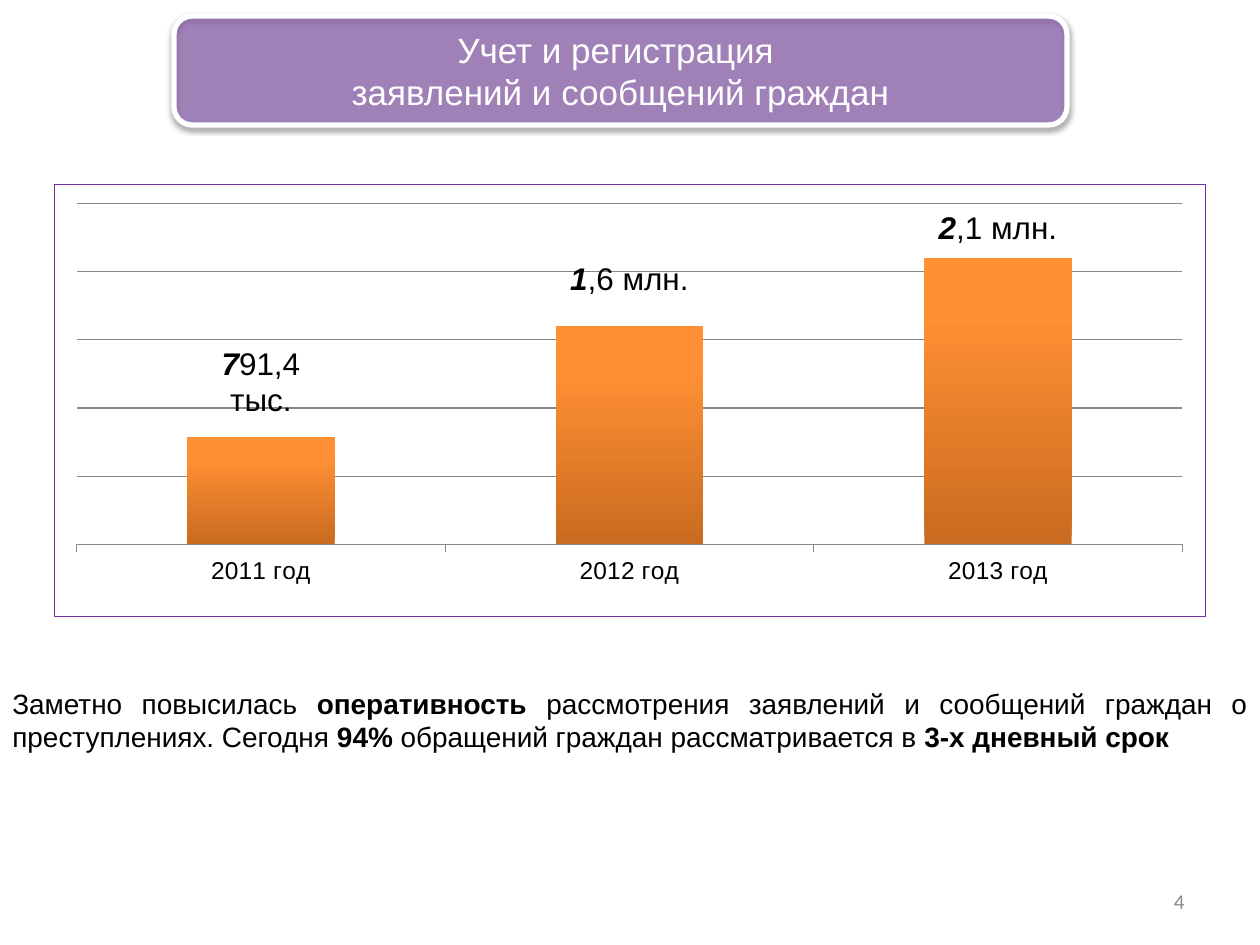
from lxml.etree import SubElement
from pptx import Presentation
from pptx.chart.data import CategoryChartData
from pptx.dml.color import RGBColor
from pptx.enum.chart import XL_CHART_TYPE as ChartType, XL_LABEL_POSITION as LabelPosition
from pptx.enum.chart import XL_TICK_MARK as TickMark
from pptx.enum.shapes import MSO_SHAPE as Shape
from pptx.enum.text import MSO_ANCHOR as Anchor, MSO_AUTO_SIZE as AutoSize, PP_ALIGN as Align
from pptx.oxml import parse_xml
from pptx.oxml.ns import nsdecls, qn
from pptx.util import Emu, Pt

FONT = "Arial"
PURPLE = "7030A0"
GREY = "878787"
BANNER = (174, 16, 893, 109)
CHART_WIDTH, CHART_HEIGHT = 1152, 433

# Category, value, label text, upward shift of the label in px
YEARS = [
    ("2011 год", 791000, "791,4 тыс.", 14),
    ("2012 год", 1600000, "1,6 млн.", 24),
    ("2013 год", 2100000, "2,1 млн.", 7),
]

# Text, bold
SUMMARY = [
    ("Заметно повысилась ", False),
    ("оперативность ", True),
    ("рассмотрения заявлений и сообщений граждан о преступлениях. Сегодня ", False),
    ("94%", True),
    (" обращений граждан рассматривается в ", False),
    ("3-х дневный срок", True),
]


def px(length):
    return Emu(round(length * 914400 / 126))


def box(*lengths):
    return [px(length) for length in lengths]


def color(value):
    return RGBColor.from_string(value)


def set_font(font, size, value, name=FONT):
    font.name, font.size = name, Pt(size)
    font.color.rgb = color(value)


def shadow():
    return parse_xml(
        f'<a:effectLst {nsdecls("a")}><a:outerShdw blurRad="{Pt(3.1)}" dist="{Pt(1.6)}" '
        'dir="5400000" rotWithShape="0"><a:srgbClr val="000000"><a:alpha val="38000"/>'
        '</a:srgbClr></a:outerShdw></a:effectLst>')


def add_banner(slide):
    banner = slide.shapes.add_shape(Shape.ROUNDED_RECTANGLE, *box(*BANNER))
    banner.fill.solid()
    banner.fill.fore_color.rgb = color(PURPLE)
    banner.line.color.rgb = color("FFFFFF")
    banner.line.width = Pt(3)
    properties = banner._element.spPr
    fill_color = properties.find(qn("a:solidFill"))[0]
    SubElement(fill_color, qn("a:alpha"), val="49000")
    properties.append(shadow())


def set_title(slide, lines):
    title = slide.shapes.title
    title.left, title.top, title.width, title.height = box(*BANNER)
    frame = title.text_frame
    frame.text = "\n".join(lines)
    frame.auto_size = AutoSize.NONE
    frame.vertical_anchor = Anchor.MIDDLE
    for paragraph in frame.paragraphs:
        paragraph.alignment = Align.CENTER
        set_font(paragraph.font, 20, "FEFEFE")
        paragraph.runs[0]._r.get_or_add_rPr().append(shadow())
    # Bring the title in front of the banner
    slide.shapes._spTree.append(title._element)


def add_text(slide, place, runs, size, value, align, name=FONT, anchor=Anchor.TOP):
    frame = slide.shapes.add_textbox(*box(*place)).text_frame
    frame.word_wrap = True
    frame.vertical_anchor = anchor
    paragraph = frame.paragraphs[0]
    paragraph.alignment = align
    set_font(paragraph.font, size, value, name)
    for text, bold in runs:
        run = paragraph.add_run()
        run.text = text
        run.font.bold = bold


def manual_layout(inner="", **values):
    parts = "".join(f'<c:{key} val="{value}"/>' for key, value in values.items())
    return parse_xml(f'<c:layout {nsdecls("c")}><c:manualLayout>{inner}{parts}'
                     '</c:manualLayout></c:layout>')


def style_axes(chart):
    values = chart.value_axis
    values.minimum_scale, values.maximum_scale, values.major_unit = 0, 2500000, 500000
    values.has_major_gridlines = True
    values.visible = False
    categories = chart.category_axis
    categories.major_tick_mark = TickMark.OUTSIDE
    for line in (values.major_gridlines.format.line, categories.format.line):
        line.color.rgb = color(GREY)
        line.width = Pt(0.75)


def style_bars(series):
    series.invert_if_negative = False
    fill = series.format.fill
    fill.gradient()
    fill.gradient_angle = 90
    for stop, position, value in zip(fill.gradient_stops, (0, 0.8), ("C96B20", "FF9033")):
        stop.position = position
        stop.color.rgb = color(value)


def label_bars(series):
    labels = series.data_labels
    labels.show_value = True
    set_font(labels.font, 18, "000000")
    labels.font.bold = True
    for index, (_, _, text, shift) in enumerate(YEARS):
        label = series.points[index].data_label
        paragraph = label.text_frame.paragraphs[0]
        # The first digit stands out in bold italic
        for part, strong in ((text[0], True), (text[1:], False)):
            run = paragraph.add_run()
            run.text = part
            set_font(run.font, 18, "000000")
            run.font.bold = run.font.italic = strong
        label.position = LabelPosition.OUTSIDE_END
        element = series._element.findall(".//" + qn("c:dLbl"))[index]
        element.insert(1, manual_layout(x=0, y=-shift / CHART_HEIGHT))

    # No leader lines between bars and labels
    group = series._element.find(qn("c:dLbls"))
    for leader in group.findall(qn("c:showLeaderLines")):
        leader.set("val", "0")
    group.append(parse_xml(
        f'<c:extLst {nsdecls("c")}><c:ext uri="{{CE6537A1-D6FC-4f65-9D91-7224C49458BB}}" '
        'xmlns:c15="http://schemas.microsoft.com/office/drawing/2012/chart">'
        '<c15:showLeaderLines val="0"/></c:ext></c:extLst>'))


def add_year_chart(slide):
    data = CategoryChartData()
    data.categories = [year[0] for year in YEARS]
    data.add_series("Series 1", [year[1] for year in YEARS])
    place = box(54, 184, CHART_WIDTH, CHART_HEIGHT)
    chart = slide.shapes.add_chart(ChartType.COLUMN_CLUSTERED, *place, data).chart
    chart.has_title = chart.has_legend = False
    set_font(chart.font, 14, "000000")

    plot = chart.plots[0]
    plot.gap_width = 150
    plot.vary_by_categories = False
    style_axes(chart)
    style_bars(plot.series[0])
    label_bars(plot.series[0])

    # Plot area position and chart border
    space = chart._chartSpace
    area = space.find(".//" + qn("c:plotArea"))
    for layout in area.findall(qn("c:layout")):
        area.remove(layout)
    area.insert(0, manual_layout('<c:layoutTarget val="inner"/>', xMode="edge", yMode="edge",
                                 x=22 / CHART_WIDTH, y=19 / CHART_HEIGHT,
                                 w=1107 / CHART_WIDTH, h=342 / CHART_HEIGHT))
    space.find(qn("c:chart")).addnext(parse_xml(
        f'<c:spPr {nsdecls("c", "a")}><a:noFill/><a:ln w="{Pt(0.75)}"><a:solidFill>'
        f'<a:srgbClr val="{PURPLE}"/></a:solidFill></a:ln></c:spPr>'))


def main():
    presentation = Presentation()
    presentation.slide_width, presentation.slide_height = box(1260, 945)
    slide = presentation.slides.add_slide(presentation.slide_layouts[5])

    add_year_chart(slide)
    add_text(slide, (0, 680, 1260, 81), SUMMARY, 16, "000000", Align.JUSTIFY)
    add_banner(slide)
    set_title(slide, ["Учет и регистрация ", "заявлений и сообщений граждан"])
    # Page number
    add_text(slide, (903, 876, 294, 50), [("4", False)], 12, "8C8C8C", Align.RIGHT,
             "Calibri", Anchor.MIDDLE)

    presentation.save("out.pptx")


if __name__ == "__main__":
    main()
